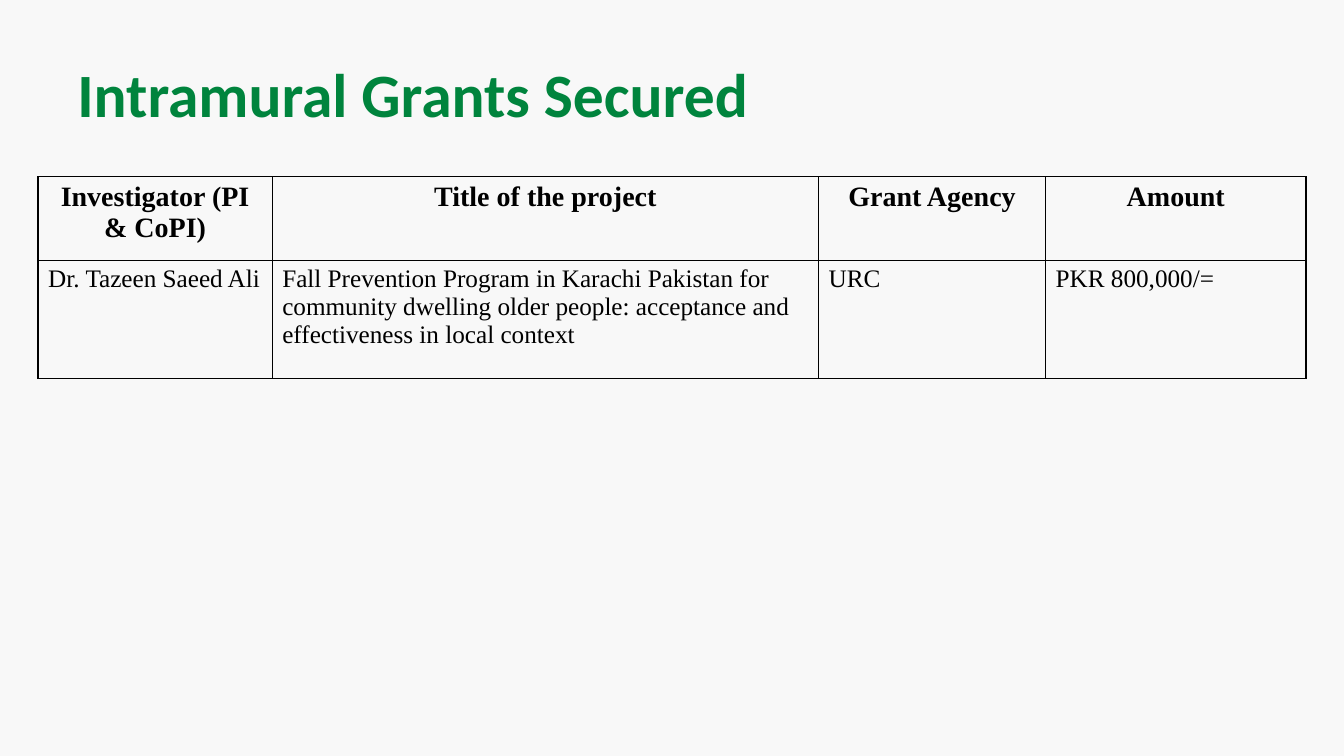
from lxml import etree
from pptx import Presentation
from pptx.dml.color import RGBColor
from pptx.enum.text import MSO_ANCHOR, PP_ALIGN
from pptx.oxml.ns import qn
from pptx.util import Cm, Pt

LEFT, CENTER = PP_ALIGN.LEFT, PP_ALIGN.CENTER
TOP, MIDDLE = MSO_ANCHOR.TOP, MSO_ANCHOR.MIDDLE
GREEN, BLACK, PAPER = "00843D", "000000", "F8F8F8"
COLUMN_WIDTHS = [5.9, 13.77, 5.72, 6.56]
ROW_HEIGHTS = [2.11, 2.97]
GRANTS = [
    ["Investigator (PI & CoPI)", "Title of the project", "Grant Agency", "Amount"],
    [
        "Dr. Tazeen Saeed Ali",
        "Fall Prevention Program in Karachi Pakistan for community dwelling "
        "older people: acceptance and effectiveness in local context",
        "URC",
        "PKR 800,000/=",
    ],
]


def color(value):
    """Return the colour of a hex string."""
    return RGBColor.from_string(value)


def write(frame, text, size, font, ink=BLACK, bold=False, align=LEFT):
    """Put one formatted paragraph into a text frame."""
    frame.word_wrap = True
    para = frame.paragraphs[0]
    para.alignment = align
    span = para.add_run()
    span.text = text
    span.font.size = Pt(size)
    span.font.name = font
    span.font.bold = bold
    span.font.color.rgb = color(ink)


def add_borders(cell, ink=BLACK, width=1):
    """Draw a solid line on all four sides of a cell."""
    properties = cell._tc.get_or_add_tcPr()
    for position, side in enumerate(("lnL", "lnR", "lnT", "lnB")):
        line = etree.Element(qn(f"a:{side}"), w=str(Pt(width)))
        fill = etree.SubElement(line, qn("a:solidFill"))
        etree.SubElement(fill, qn("a:srgbClr"), val=ink)
        properties.insert(position, line)


def add_title(page, left, top, width, height):
    """Place the slide heading in its box."""
    box = page.shapes.add_textbox(Cm(left), Cm(top), Cm(width), Cm(height))
    box.text_frame.vertical_anchor = MIDDLE
    write(box.text_frame, "Intramural Grants Secured", size=44,
          font="Calibri", ink=GREEN, bold=True)


def add_grants(page, left, top):
    """Place the table of grants with its corner at the given point."""
    frame = page.shapes.add_table(
        len(GRANTS), len(COLUMN_WIDTHS), Cm(left), Cm(top),
        Cm(sum(COLUMN_WIDTHS)), Cm(sum(ROW_HEIGHTS)))
    table = frame.table
    table.horz_banding = False
    for column, width in zip(table.columns, COLUMN_WIDTHS):
        column.width = Cm(width)
    for index, (row, height) in enumerate(zip(table.rows, ROW_HEIGHTS)):
        row.height = Cm(height)
        header = index == 0
        for cell, text in zip(row.cells, GRANTS[index]):
            cell.fill.background()
            cell.vertical_anchor = TOP
            write(cell.text_frame, text, size=20 if header else 18,
                  font="Times New Roman", bold=header,
                  align=CENTER if header else LEFT)
            add_borders(cell)


def main():
    """Build the slide and save the deck."""
    deck = Presentation()
    deck.slide_width, deck.slide_height = Cm(33.87), Cm(19.05)
    page = deck.slides.add_slide(deck.slide_layouts[6])
    page.background.fill.solid()
    page.background.fill.fore_color.rgb = color(PAPER)
    add_title(page, left=1.7, top=0.76, width=30.48, height=3.18)
    add_grants(page, left=0.96, top=4.45)
    deck.save("out.pptx")


if __name__ == "__main__":
    main()
